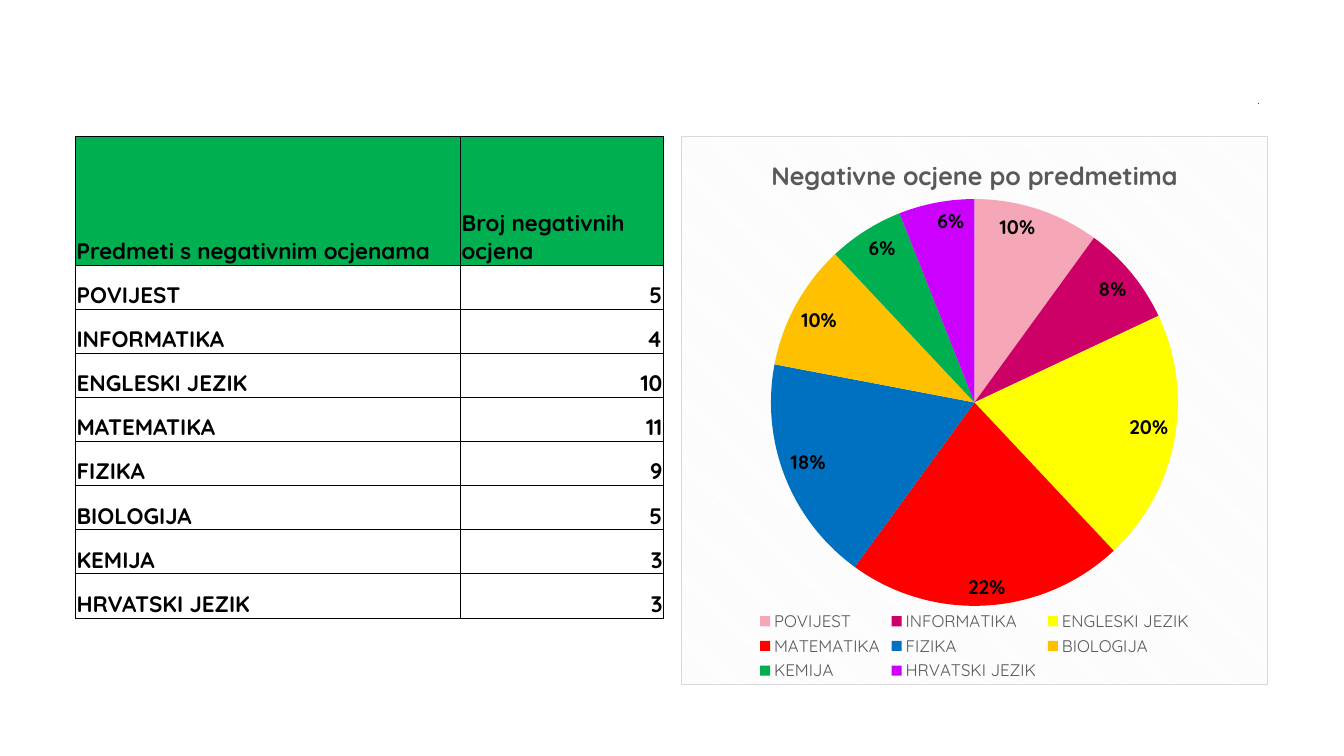
from dataclasses import dataclass

from lxml import etree
from pptx import Presentation
from pptx.chart.data import CategoryChartData
from pptx.dml.color import RGBColor
from pptx.enum.chart import XL_CHART_TYPE, XL_LABEL_POSITION, XL_LEGEND_POSITION
from pptx.enum.text import MSO_ANCHOR, PP_ALIGN
from pptx.oxml import parse_xml
from pptx.oxml.ns import nsdecls, qn
from pptx.util import Inches, Pt

PIE = XL_CHART_TYPE.PIE
INSIDE_END = XL_LABEL_POSITION.INSIDE_END
LEGEND_BOTTOM = XL_LEGEND_POSITION.BOTTOM
LEFT, RIGHT = PP_ALIGN.LEFT, PP_ALIGN.RIGHT
BOTTOM, MIDDLE = MSO_ANCHOR.BOTTOM, MSO_ANCHOR.MIDDLE


@dataclass(frozen=True)
class Theme:
    """Colours, font and type sizes of the slide."""
    font: str = "Quicksand"
    ink: str = "000000"
    muted: str = "595959"
    header: str = "00B050"
    frame: str = "D9D9D9"
    hatch: str = "F2F2F2"
    paper: str = "FFFFFF"
    mark: int = 8
    base: int = 10
    legend: int = 12
    label: int = 14
    cell: int = 16
    title: int = 18


THEME = Theme()
WIDTH, HEIGHT = 13.33, 7.5
TOP, PANEL_WIDTH = 1.35, 5.83
TABLE_LEFT, CHART_LEFT = 0.75, 6.75
COLUMNS = (3.82, 2.01)
HEADER_HEIGHT, ROW_HEIGHT, CHART_HEIGHT = 1.28, 0.4375, 5.45
HEADERS = ("Predmeti s negativnim ocjenama", "Broj negativnih ocjena")
SUBJECTS = (
    ("POVIJEST", 5, 10, "F5A7B8"),
    ("INFORMATIKA", 4, 8, "CC0066"),
    ("ENGLESKI JEZIK", 10, 20, "FFFF00"),
    ("MATEMATIKA", 11, 22, "FF0000"),
    ("FIZIKA", 9, 18, "0070C0"),
    ("BIOLOGIJA", 5, 10, "FFC000"),
    ("KEMIJA", 3, 6, "00B050"),
    ("HRVATSKI JEZIK", 3, 6, "CC00FF"),
)


def style_font(font, size, color, bold=False):
    """Apply the theme font with a size, colour and weight."""
    font.name, font.size, font.bold = THEME.font, Pt(size), bold
    font.color.rgb = RGBColor.from_string(color)


def add_run(p, text, size, align, bold=False):
    """Add one styled run to an aligned paragraph."""
    p.alignment = align
    r = p.add_run()
    r.text = text
    style_font(r.font, size, THEME.ink, bold)


def add_mark(s):
    """Add the small right-aligned heading."""
    sp = s.shapes.add_textbox(Inches(3.17), Inches(0.84), Inches(9.42), Inches(0.33))
    tf = sp.text_frame
    tf.word_wrap, tf.vertical_anchor = True, MIDDLE
    p = tf.paragraphs[0]
    p.line_spacing = 0.9
    add_run(p, ".", THEME.mark, RIGHT)


def add_borders(cell):
    """Draw a thin line on every side of a cell."""
    tcPr = cell._tc.get_or_add_tcPr()
    for i, side in enumerate("LRTB"):
        tcPr.insert(i, parse_xml(
            f'<a:ln{side} {nsdecls("a")} w="{Pt(0.5)}"><a:solidFill>'
            f'<a:srgbClr val="{THEME.ink}"/></a:solidFill></a:ln{side}>'))


def fill_cell(cell, text, align, fill=None):
    """Write, fill and border one table cell."""
    cell.margin_left = cell.margin_right = cell.margin_top = Inches(0.01)
    cell.margin_bottom = 0
    cell.vertical_anchor = BOTTOM
    add_run(cell.text_frame.paragraphs[0], text, THEME.cell, align, True)
    if fill:
        cell.fill.solid()
        cell.fill.fore_color.rgb = RGBColor.from_string(fill)
    else:
        cell.fill.background()
    add_borders(cell)


def add_grades_table(s):
    """Add the table of subjects and negative grades."""
    heights = [HEADER_HEIGHT] + [ROW_HEIGHT] * len(SUBJECTS)
    table = s.shapes.add_table(
        len(heights), len(COLUMNS), Inches(TABLE_LEFT), Inches(TOP),
        Inches(PANEL_WIDTH), Inches(sum(heights))).table
    table.horz_banding = False
    for column, width in zip(table.columns, COLUMNS):
        column.width = Inches(width)
    for row, height in zip(table.rows, heights):
        row.height = Inches(height)
    for i, text in enumerate(HEADERS):
        fill_cell(table.cell(0, i), text, LEFT, THEME.header)
    for i, (subject, count, _, _) in enumerate(SUBJECTS, 1):
        fill_cell(table.cell(i, 0), subject, LEFT)
        fill_cell(table.cell(i, 1), str(count), RIGHT)


def manual_layout(x, y, w, h, inner=False):
    """Build a chart layout from shares of the chart's size."""
    layout = etree.Element(qn("c:layout"))
    manual = etree.SubElement(layout, qn("c:manualLayout"))
    values = [("layoutTarget", "inner")] if inner else []
    values += [("xMode", "edge"), ("yMode", "edge"),
               ("x", x), ("y", y), ("w", w), ("h", h)]
    for tag, value in values:
        etree.SubElement(manual, qn(f"c:{tag}")).set("val", str(value))
    return layout


def place_chart_parts(chart):
    """Set the plot and legend layouts and the hatched frame."""
    root = chart._chartSpace
    for layout in root.findall(".//" + qn("c:layout")):
        layout.getparent().remove(layout)
    root.find(".//" + qn("c:plotArea")).insert(
        0, manual_layout(0.03, 0.114, 0.94, 0.742, inner=True))
    root.find(".//" + qn("c:legendPos")).addnext(
        manual_layout(0.124, 0.858, 0.752, 0.142))
    root.find(qn("c:txPr")).addprevious(parse_xml(
        f'<c:spPr {nsdecls("c", "a")}><a:pattFill prst="dkDnDiag">'
        f'<a:fgClr><a:srgbClr val="{THEME.hatch}"/></a:fgClr>'
        f'<a:bgClr><a:srgbClr val="{THEME.paper}"/></a:bgClr></a:pattFill>'
        f'<a:ln w="{Pt(0.75)}"><a:solidFill><a:srgbClr val="{THEME.frame}"/>'
        '</a:solidFill></a:ln></c:spPr>'))


def add_grades_chart(s):
    """Add the pie chart of negative grades by subject."""
    data = CategoryChartData()
    data.categories = [subject for subject, *_ in SUBJECTS]
    data.add_series("Series 1", [share for _, _, share, _ in SUBJECTS])
    chart = s.shapes.add_chart(
        PIE, Inches(CHART_LEFT), Inches(TOP),
        Inches(PANEL_WIDTH), Inches(CHART_HEIGHT), data).chart
    style_font(chart.font, THEME.base, THEME.ink)
    chart.has_title = True
    r = chart.chart_title.text_frame.paragraphs[0].add_run()
    r.text = "Negativne ocjene po predmetima"
    style_font(r.font, THEME.title, THEME.muted, True)
    chart.has_legend = True
    chart.legend.position = LEGEND_BOTTOM
    chart.legend.include_in_layout = False
    style_font(chart.legend.font, THEME.legend, THEME.muted)
    plot = chart.plots[0]
    plot.vary_by_categories = True
    series = plot.series[0]
    for i, (_, _, _, color) in enumerate(SUBJECTS):
        fill = series.points[i].format.fill
        fill.solid()
        fill.fore_color.rgb = RGBColor.from_string(color)
    labels = series.data_labels
    labels.show_percentage, labels.show_value = True, False
    labels.number_format, labels.number_format_is_linked = "0%", False
    labels.position = INSIDE_END
    style_font(labels.font, THEME.label, THEME.ink, True)
    place_chart_parts(chart)


def main():
    """Build and save the slide."""
    prs = Presentation()
    prs.slide_width, prs.slide_height = Inches(WIDTH), Inches(HEIGHT)
    s = prs.slides.add_slide(prs.slide_layouts[6])
    add_mark(s)
    add_grades_table(s)
    add_grades_chart(s)
    prs.save("out.pptx")


if __name__ == "__main__":
    main()
